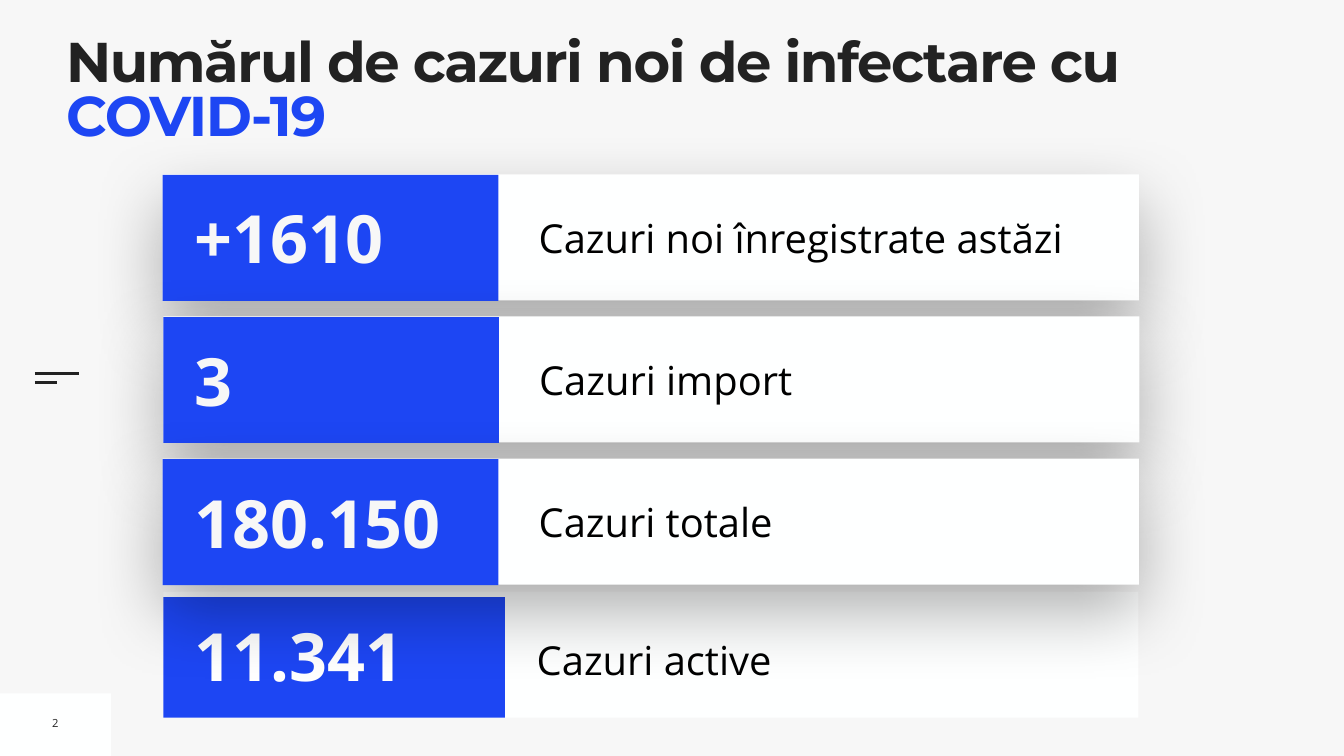
from dataclasses import dataclass
from lxml.etree import SubElement
from pptx import Presentation
from pptx.dml.color import RGBColor
from pptx.enum.shapes import MSO_CONNECTOR, MSO_SHAPE
from pptx.enum.text import MSO_ANCHOR, MSO_AUTO_SIZE, PP_ALIGN
from pptx.oxml.ns import qn
from pptx.util import Pt

PX = 9144


@dataclass(frozen=True)
class Theme:
    paper: str = "F7F7F7"
    card: str = "FEFFFF"
    blue: str = "1D46F3"
    ink: str = "222222"
    black: str = "000000"
    white: str = "FFFFFF"
    head: str = "Montserrat"
    body: str = "Open Sans"
    title: int = 80
    value: int = 95
    label: int = 57
    small: int = 16


class Deck:
    def __init__(self, theme, width, height):
        self.theme = theme
        self.file = Presentation()
        self.file.slide_width = width * PX
        self.file.slide_height = height * PX
        self.slide = self.file.slides.add_slide(self.file.slide_layouts[5])
        fill = self.slide.background.fill
        fill.solid()
        fill.fore_color.rgb = RGBColor.from_string(theme.paper)

    def style(self, font, face, size, color, bold=False):
        font.name = face
        font.size = Pt(size)
        font.bold = bold
        font.color.rgb = RGBColor.from_string(color)

    def inset(self, frame, gap):
        frame.margin_left = frame.margin_right = gap * PX
        frame.margin_top = frame.margin_bottom = gap * PX

    def title(self, box, parts):
        shape = self.slide.shapes.title
        shape.left, shape.top, shape.width, shape.height = (n * PX for n in box)
        frame = shape.text_frame
        frame.auto_size = MSO_AUTO_SIZE.NONE
        frame.vertical_anchor = MSO_ANCHOR.TOP
        frame.word_wrap = True
        self.inset(frame, 0)
        para = frame.paragraphs[0]
        para.alignment = PP_ALIGN.LEFT
        para.line_spacing = 0.8
        for words, color in parts:
            run = para.add_run()
            run.text = words
            self.style(run.font, self.theme.head, self.theme.title, color, True)
            run.font._element.set("spc", "-200")

    def rect(self, box, color, shadow=False):
        shape = self.slide.shapes.add_shape(MSO_SHAPE.RECTANGLE, *(n * PX for n in box))
        shape.fill.solid()
        shape.fill.fore_color.rgb = RGBColor.from_string(color)
        shape.line.fill.background()
        shape.shadow.inherit = False
        if shadow:
            effects = shape._element.spPr.find(qn("a:effectLst"))
            outer = SubElement(effects, qn("a:outerShdw"), blurRad=str(Pt(100)),
                               dist=str(Pt(40)), dir="5400000", rotWithShape="0")
            tint = SubElement(outer, qn("a:srgbClr"), val=self.theme.black)
            SubElement(tint, qn("a:alpha"), val="30000")

    def text(self, box, words, size, color, bold=False, inset=10, wrap=True):
        frame = self.slide.shapes.add_textbox(*(n * PX for n in box)).text_frame
        frame.word_wrap = wrap
        frame.vertical_anchor = MSO_ANCHOR.MIDDLE
        self.inset(frame, inset)
        para = frame.paragraphs[0]
        para.text = words
        self.style(para.font, self.theme.body, size, color, bold)
        return para

    def line(self, left, top, width):
        line = self.slide.shapes.add_connector(
            MSO_CONNECTOR.STRAIGHT, left * PX, top * PX, (left + width) * PX, top * PX)
        line.line.color.rgb = RGBColor.from_string(self.theme.ink)
        line.line.width = Pt(3)
        SubElement(line._element.spPr, qn("a:effectLst"))

    def row(self, left, top, value, label):
        look = self.theme
        self.rect((left, top, 1937, 250), look.card, shadow=True)
        self.text((left + 736, top + 67, 1176, 116), label, look.label, look.black)
        self.rect((left, top + 1, 666, 250), look.blue)
        self.text((left + 53, top + 35, 603, 180), value, look.value, look.paper, True)

    def last(self, value, label):
        look = self.theme
        self.rect((324, 1174, 1935, 250), look.card)
        para = self.text((1065, 1232, 1158, 125), label, look.label, look.black, inset=0)
        para.line_spacing = 1.3
        para.space_before = Pt(20)
        self.rect((324, 1185, 678, 239), look.blue)
        self.text((377, 1209, 603, 180), value, look.value, look.white, True)


def main():
    look = Theme()
    deck = Deck(look, 2667, 1500)
    deck.rect((0, 1376, 220, 124), look.card)
    deck.line(69, 741, 88)
    deck.line(69, 759, 44)
    page = deck.text((93, 1409, 34, 51), "2", look.small, look.ink, wrap=False)
    page.alignment = PP_ALIGN.CENTER
    deck.title((131, 78, 2394, 158), [
        ("Numărul de cazuri noi de infectare cu ", look.ink),
        ("COVID-19", look.blue),
    ])
    deck.last("11.341", "Cazuri active")
    rows = [
        (323, "+1610", "Cazuri noi înregistrate astăzi"),
        (324, "3", "Cazuri import"),
        (323, "180.150", "Cazuri totale"),
    ]
    for step, (left, value, label) in enumerate(rows):
        deck.row(left, 346 + step * 282, value, label)
    deck.file.save("out.pptx")


if __name__ == "__main__":
    main()
